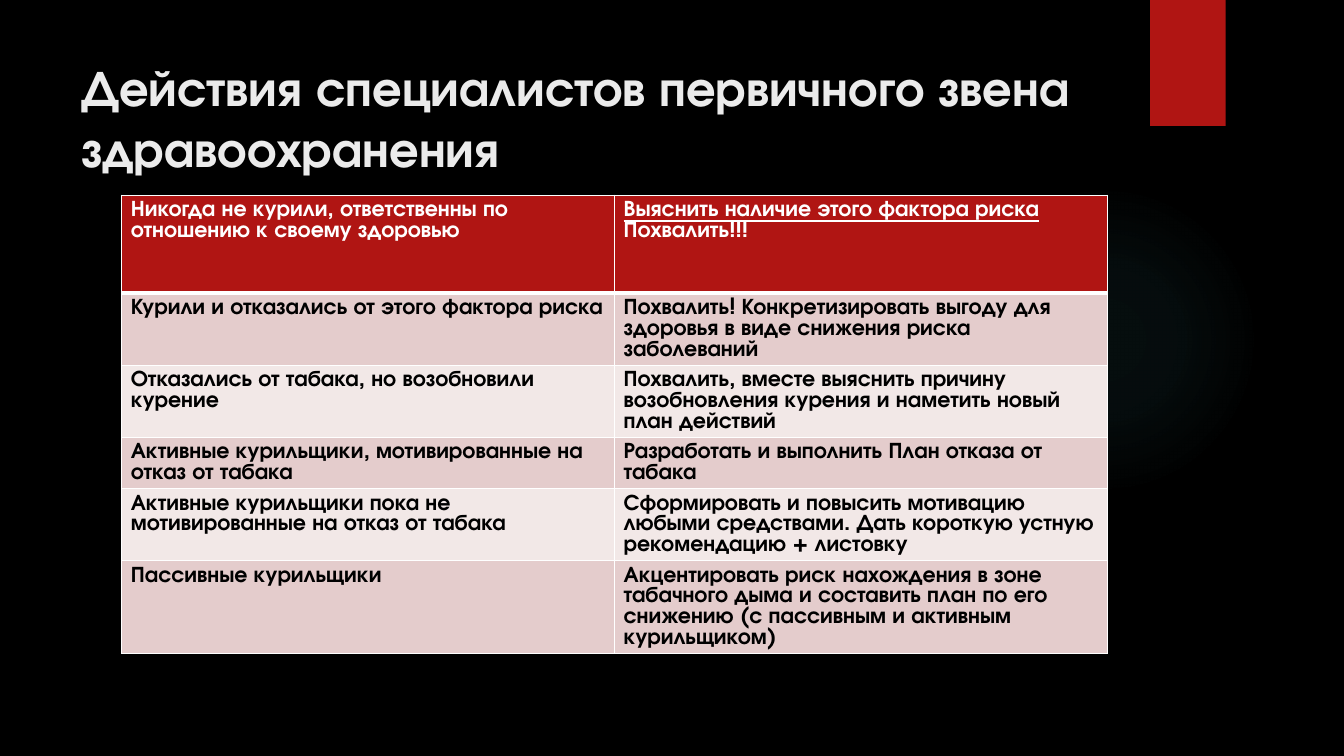
from dataclasses import dataclass

from lxml import etree
from pptx import Presentation
from pptx.dml.color import RGBColor
from pptx.enum import shapes, text
from pptx.oxml import ns
from pptx.util import Pt


@dataclass(frozen=True)
class Theme:
    font: str = "TeX Gyre Adventor"
    background: str = "000000"
    accent: str = "B01513"
    glow: str = "50B9C1"
    title: str = "EBEBEB"
    header_text: str = "FFFFFF"
    body_text: str = "000000"
    border: str = "FFFFFF"
    bands: tuple = ("E4CCCC", "F2E8E7")
    title_size: float = 36
    title_line: float = 43.6
    table_size: float = 16
    table_line: float = 14.75


THEME = Theme()
TITLE = "Действия специалистов первичного звена здравоохранения"
HEADER = (
    ("Никогда не курили, ответственны по отношению к своему здоровью",),
    ("Выяснить наличие этого фактора риска ", "Похвалить!!!"),
)
ADVICE = (
    ("Курили и отказались от этого фактора риска",
     "Похвалить! Конкретизировать выгоду для здоровья в виде снижения риска заболеваний"),
    ("Отказались от табака, но возобновили курение",
     "Похвалить, вместе выяснить причину возобновления курения и наметить новый план действий"),
    ("Активные курильщики, мотивированные на отказ от табака",
     "Разработать и выполнить План отказа от табака"),
    ("Активные курильщики пока не мотивированные на отказ от табака",
     "Сформировать и повысить мотивацию любыми средствами. "
     "Дать короткую устную рекомендацию + листовку"),
    ("Пассивные курильщики",
     "Акцентировать риск нахождения в зоне табачного дыма и составить план по его снижению "
     "(с пассивным и активным курильщиком)"),
)


def color(value):
    return RGBColor.from_string(value)


def add_xml(parent, tag, **attributes):
    element = etree.SubElement(parent, ns.qn(tag))
    for name, value in attributes.items():
        element.set(name, str(value))
    return element


def add_plain_shape(slide, kind, left, top, width, height, fill):
    shape = slide.shapes.add_shape(kind, Pt(left), Pt(top), Pt(width), Pt(height))
    shape.shadow.inherit = False
    shape.line.fill.background()
    shape.fill.solid()
    shape.fill.fore_color.rgb = color(fill)
    return shape


def add_glow(slide):
    shape = add_plain_shape(slide, shapes.MSO_SHAPE.OVAL, 677.5, 131.75, 221.75, 221.75, THEME.glow)
    properties = shape.fill._xPr
    solid = properties.find(ns.qn("a:solidFill"))
    gradient = etree.Element(ns.qn("a:gradFill"))
    stops = add_xml(gradient, "a:gsLst")
    for position, opacity in ((0, 7), (36, 6), (69, 0), (100, 0)):
        stop = add_xml(stops, "a:gs", pos=position * 1000)
        tint = add_xml(stop, "a:srgbClr", val=THEME.glow)
        add_xml(tint, "a:alpha", val=opacity * 1000)
    circle = add_xml(gradient, "a:path", path="circle")
    add_xml(circle, "a:fillToRect", l=50000, t=50000, r=50000, b=50000)
    properties.replace(solid, gradient)


def write_runs(paragraph, parts, size, line, tint):
    paragraph.line_spacing = Pt(line)
    for part in parts:
        run = paragraph.add_run()
        run.text = part
        run.font.name = THEME.font
        run.font.size = Pt(size)
        run.font.bold = True
        run.font.color.rgb = color(tint)


def add_title(slide):
    box = slide.shapes.add_textbox(Pt(51), Pt(36), Pt(741), Pt(110))
    frame = box.text_frame
    frame.word_wrap = True
    frame.vertical_anchor = text.MSO_ANCHOR.TOP
    write_runs(frame.paragraphs[0], (TITLE,), THEME.title_size, THEME.title_line, THEME.title)


def set_borders(cell, top, bottom):
    properties = cell._tc.get_or_add_tcPr()
    sides = (("a:lnL", 1), ("a:lnR", 1), ("a:lnT", top), ("a:lnB", bottom))
    for index, (tag, width) in enumerate(sides):
        line = add_xml(properties, tag, w=Pt(width))
        fill = add_xml(line, "a:solidFill")
        add_xml(fill, "a:srgbClr", val=THEME.border)
        properties.insert(index, line)


def fill_cell(cell, parts, fill, tint, top=1, bottom=1):
    cell.margin_left = cell.margin_right = Pt(6.5)
    cell.margin_top = cell.margin_bottom = Pt(3.6)
    cell.fill.solid()
    cell.fill.fore_color.rgb = color(fill)
    set_borders(cell, top, bottom)
    paragraph = cell.text_frame.paragraphs[0]
    write_runs(paragraph, parts, THEME.table_size, THEME.table_line, tint)


def add_advice_table(slide):
    row_heights = (70, 51.5, 51.5, 36.7, 51.5, 66.3)
    frame = slide.shapes.add_table(
        len(row_heights), 2, Pt(87), Pt(139.5), Pt(704), Pt(sum(row_heights)))
    table = frame.table
    for column in table.columns:
        column.width = Pt(352)
    for row, height in zip(table.rows, row_heights):
        row.height = Pt(height)
    for column, parts in enumerate(HEADER):
        fill_cell(table.cell(0, column), parts, THEME.accent, THEME.header_text, bottom=3)
    table.cell(0, 1).text_frame.paragraphs[0].runs[0].font.underline = True
    for index, advice in enumerate(ADVICE):
        for column, words in enumerate(advice):
            fill_cell(table.cell(index + 1, column), (words,), THEME.bands[index % 2],
                      THEME.body_text, top=1 if index else 3)


def main():
    presentation = Presentation()
    presentation.slide_width = Pt(960)
    presentation.slide_height = Pt(540)
    slide = presentation.slides.add_slide(presentation.slide_layouts[6])
    slide.background.fill.solid()
    slide.background.fill.fore_color.rgb = color(THEME.background)
    add_glow(slide)
    add_plain_shape(slide, shapes.MSO_SHAPE.RECTANGLE, 821.5, 0, 54, 90, THEME.accent)
    add_title(slide)
    add_advice_table(slide)
    presentation.save("out.pptx")


if __name__ == "__main__":
    main()
